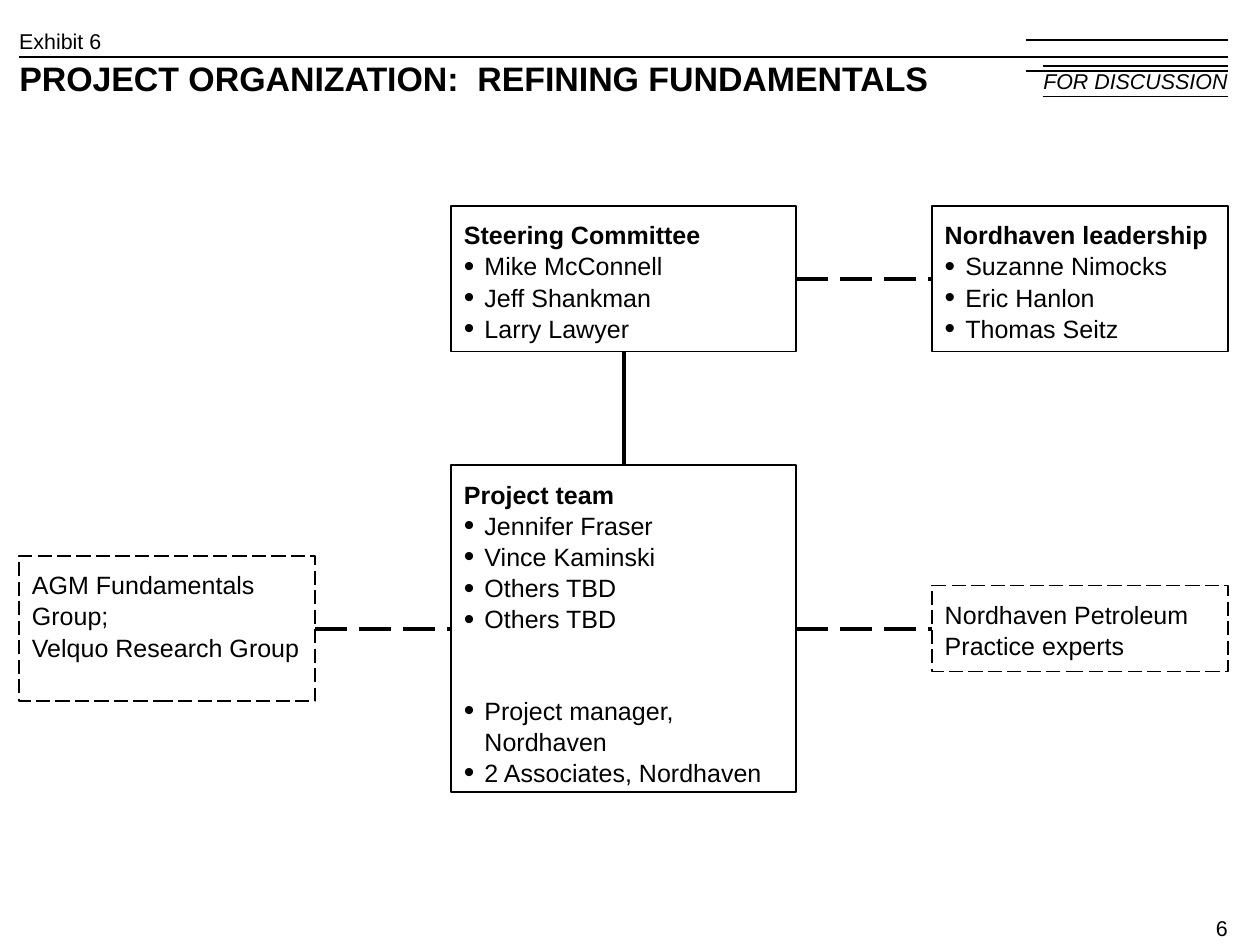
"""Build the project organization chart slide."""
from lxml import etree
from pptx import Presentation
from pptx.dml.color import RGBColor
from pptx.enum.dml import MSO_LINE
from pptx.enum.shapes import MSO_CONNECTOR, MSO_SHAPE
from pptx.enum.text import MSO_ANCHOR, PP_ALIGN
from pptx.oxml.ns import qn
from pptx.util import Pt

FONT, BLACK, WHITE = "Arial", "000000", "FFFFFF"
WIDTH, HEIGHT = 705.6, 529.2
LEFT, RIGHT = 10.8, 687.6
CENTER = (LEFT + RIGHT) / 2
CORE_WIDTH, SIDE_WIDTH = 193, 165.6
SIDE_X = RIGHT - SIDE_WIDTH
CORE_X = CENTER - CORE_WIDTH / 2
TOP_ROW, TEAM_ROW = 156, 352
TEAM_GAP = 33.6
BOTTOM, LEFT_SIDE, RIGHT_SIDE, TOP = 2, 1, 3, 0

TITLE = "PROJECT ORGANIZATION:  REFINING FUNDAMENTALS"

# name: (x, row centre, width, height, dashed, heading, plain lines, bullets)
UNITS = {
    "steering": (CORE_X, TOP_ROW, CORE_WIDTH, 81.6, False, "Steering Committee", [],
                 ["Mike McConnell", "Jeff Shankman", "Larry Lawyer"]),
    "leadership": (SIDE_X, TOP_ROW, SIDE_WIDTH, 81.6, False, "Nordhaven leadership", [],
                   ["Suzanne Nimocks", "Eric Hanlon", "Thomas Seitz"]),
    "team": (CORE_X, TEAM_ROW, CORE_WIDTH, 183, False, "Project team", [],
             ["Jennifer Fraser", "Vince Kaminski", "Others TBD", "Others TBD",
              "Project manager, Nordhaven", "2 Associates, Nordhaven"]),
    "experts": (SIDE_X, TEAM_ROW, SIDE_WIDTH, 48.2, True, None,
                ["Nordhaven Petroleum Practice experts"], []),
    "research": (LEFT, TEAM_ROW, SIDE_WIDTH, 81.6, True, None,
                 ["AGM Fundamentals Group;", "Velquo Research Group"], []),
}
GAP_BEFORE = "Project manager, Nordhaven"
LINKS = [
    ("steering", BOTTOM, "team", TOP, False),
    ("research", RIGHT_SIDE, "team", LEFT_SIDE, True),
    ("team", RIGHT_SIDE, "experts", LEFT_SIDE, True),
    ("steering", RIGHT_SIDE, "leadership", LEFT_SIDE, True),
]
RULES = [(574.6, 22.4), (574.6, 39.6), (583.9, 36.8), (583.9, 54), (LEFT, 31.8)]
LABELS = [
    ("Exhibit 6", LEFT, 15.8, 46.1, PP_ALIGN.LEFT, False),
    ("FOR DISCUSSION", 583.9, 38.2, 103.7, PP_ALIGN.RIGHT, True),
    ("6", 673.2, 512.6, 14.4, PP_ALIGN.RIGHT, False),
]


def color(value):
    return RGBColor.from_string(value)


def style(paragraph, size, bold=False, italic=False, align=PP_ALIGN.LEFT):
    paragraph.alignment = align
    font = paragraph.font
    font.name, font.size, font.bold, font.italic = FONT, Pt(size), bold, italic
    font.color.rgb = color(BLACK)


def set_frame(frame, inset, wrap):
    frame.margin_left = frame.margin_right = Pt(inset)
    frame.margin_top = frame.margin_bottom = Pt(inset)
    frame.vertical_anchor = MSO_ANCHOR.TOP
    frame.word_wrap = wrap


def set_line(line, width, dashed=False):
    line.color.rgb = color(BLACK)
    line.width = Pt(width)
    if dashed:
        line.dash_style = MSO_LINE.LONG_DASH


def add_bullet(paragraph):
    properties = paragraph._p.get_or_add_pPr()
    properties.set("marL", str(Pt(11.5)))
    properties.set("indent", str(-Pt(11.5)))
    bullet_color = etree.SubElement(properties, qn("a:buClr"))
    etree.SubElement(bullet_color, qn("a:srgbClr"), val=BLACK)
    etree.SubElement(properties, qn("a:buSzPct"), val="120000")
    etree.SubElement(properties, qn("a:buFont"), typeface=FONT)
    etree.SubElement(properties, qn("a:buChar"), char="•")


def add_line(shapes, start, end, width, dashed=False):
    line = shapes.add_connector(MSO_CONNECTOR.STRAIGHT, *map(Pt, start + end))
    set_line(line.line, width, dashed)
    etree.SubElement(line._element.spPr, qn("a:effectLst"))
    return line


def add_unit(shapes, x, middle, width, height, dashed, heading, lines, bullets):
    box = shapes.add_shape(MSO_SHAPE.RECTANGLE, Pt(x), Pt(middle - height / 2),
                           Pt(width), Pt(height))
    box.shadow.inherit = False
    box.fill.solid()
    box.fill.fore_color.rgb = color(WHITE)
    set_line(box.line, 1, dashed)
    frame = box.text_frame
    set_frame(frame, 7.2, True)
    entries = [(heading, True, False)] if heading else []
    entries += [(text, False, False) for text in lines]
    entries += [(text, False, True) for text in bullets]
    for index, (text, bold, bulleted) in enumerate(entries):
        paragraph = frame.add_paragraph() if index else frame.paragraphs[0]
        paragraph.text = text
        if bulleted:
            add_bullet(paragraph)
        paragraph.line_spacing = 1.04
        if text == GAP_BEFORE:
            paragraph.space_before = Pt(TEAM_GAP)
        style(paragraph, 14, bold)
    return box


def main():
    deck = Presentation()
    deck.slide_width, deck.slide_height = Pt(WIDTH), Pt(HEIGHT)
    slide = deck.slides.add_slide(deck.slide_layouts[5])
    shapes = slide.shapes

    title = shapes.title
    title.left, title.top, title.width, title.height = map(Pt, (LEFT, 32.4, RIGHT - LEFT, 23))
    title.text_frame.text = TITLE
    set_frame(title.text_frame, 0, True)
    style(title.text_frame.paragraphs[0], 19, bold=True)

    for start, y in RULES:
        add_line(shapes, (start, y), (RIGHT, y), 1)

    boxes = {name: add_unit(shapes, *unit) for name, unit in UNITS.items()}
    for source, source_side, target, target_side, dashed in LINKS:
        link = add_line(shapes, (0, 0), (0, 0), 2.25, dashed)
        link.begin_connect(boxes[source], source_side)
        link.end_connect(boxes[target], target_side)

    for text, x, y, width, align, italic in LABELS:
        label = shapes.add_textbox(Pt(x), Pt(y), Pt(width), Pt(14.4))
        set_frame(label.text_frame, 0, False)
        label.text_frame.text = text
        style(label.text_frame.paragraphs[0], 12, italic=italic, align=align)

    deck.save("out.pptx")


if __name__ == "__main__":
    main()
